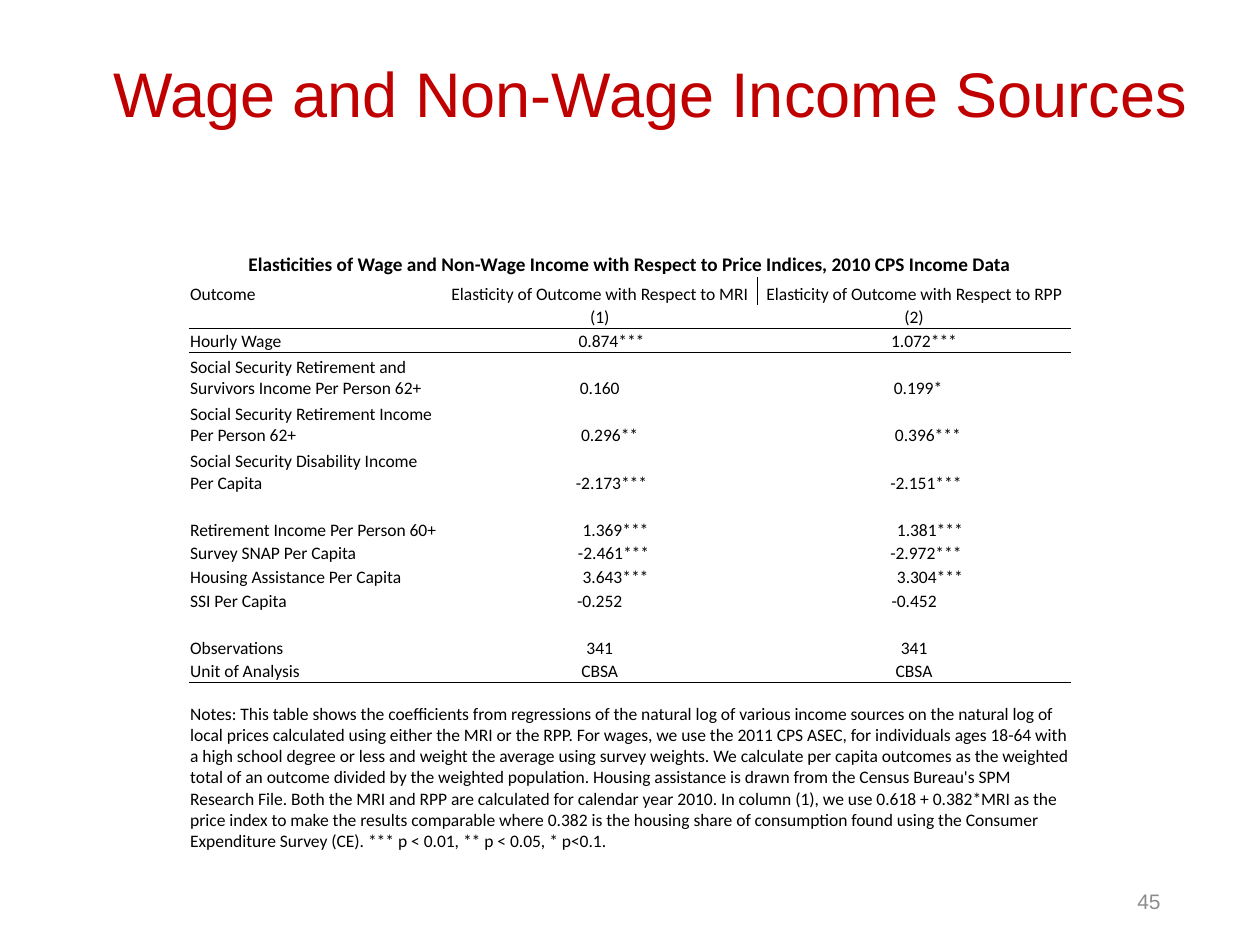
from dataclasses import dataclass

from lxml import etree
from pptx import Presentation
from pptx.dml.color import RGBColor
from pptx.enum import text
from pptx.oxml import ns
from pptx.util import Pt


@dataclass(frozen=True)
class Theme:
    title: str = "C00000"
    ink: str = "000000"
    muted: str = "8C8C8C"
    heading_font: str = "Arial"
    body_font: str = "Calibri"
    title_size: float = 36
    caption_size: float = 11
    body_size: float = 10
    number_size: float = 12
    rule_width: float = 0.5
    plain_table: str = "{2D5ABB26-0587-4C30-8999-92F81FD0307C}"


LEFT, CENTER, RIGHT = (text.PP_ALIGN.LEFT, text.PP_ALIGN.CENTER,
                       text.PP_ALIGN.RIGHT)
BOTTOM, MIDDLE = text.MSO_ANCHOR.BOTTOM, text.MSO_ANCHOR.MIDDLE

CAPTION = ("Elasticities of Wage and Non-Wage Income with Respect to "
           "Price Indices, 2010 CPS Income Data")
NOTES = (
    "Notes: This table shows the coefficients from regressions of the natural "
    "log of various income sources on the natural log of local prices "
    "calculated using either the MRI or the RPP. For wages, we use the 2011 "
    "CPS ASEC, for individuals ages 18-64 with a high school degree or less "
    "and weight the average using survey weights. We calculate per capita "
    "outcomes as the weighted total of an outcome divided by the weighted "
    "population. Housing assistance is drawn from the Census Bureau's SPM "
    "Research File. Both the MRI and RPP are calculated for calendar year "
    "2010. In column (1), we use 0.618 + 0.382*MRI as the price index to make "
    "the results comparable where 0.382 is the housing share of consumption "
    "found using the Consumer Expenditure Survey (CE). *** p < 0.01, "
    "** p < 0.05, * p<0.1."
)

# Each row: outcome, MRI value, RPP value
ROWS = [
    (CAPTION, "", ""),
    ("Outcome", "Elasticity of Outcome with Respect to MRI",
     "Elasticity of Outcome with Respect to RPP"),
    ("", "(1)", "(2)"),
    ("Hourly Wage", "0.874***", "1.072***"),
    ("Social Security Retirement and Survivors Income Per Person 62+",
     "0.160", "0.199*"),
    ("Social Security Retirement Income Per Person 62+",
     "0.296**", "0.396***"),
    ("Social Security Disability Income Per Capita",
     "-2.173***", "-2.151***"),
    ("Retirement Income Per Person 60+", "1.369***", "1.381***"),
    ("Survey SNAP Per Capita", "-2.461***", "-2.972***"),
    ("Housing Assistance Per Capita", "3.643***", "3.304***"),
    ("SSI Per Capita", "-0.252", "-0.452"),
    ("", "", ""),
    ("Observations", "341", "341"),
    ("Unit of Analysis", "CBSA", "CBSA"),
    (NOTES, "", ""),
]
CAPTION_ROW, HEADER_ROW, NUMBER_ROW = 0, 1, 2
UNIT_ROW, NOTES_ROW = len(ROWS) - 2, len(ROWS) - 1
COLUMN_WIDTHS = [144.7, 180, 179.3]
LINE = 13.5
ROW_HEIGHTS = [14.4, 15.8] + [LINE] * 2 + [2 * LINE] * 4 + [LINE] * 6 + [97]

# Left indents, in points, that line up the starred values
INDENTS = {
    "0.874***": 13.5, "1.072***": 11.3, "0.199*": 4.5, "0.296**": 11.3,
    "0.396***": 15.8, "-2.173***": 13.5, "-2.151***": 13.5, "1.369***": 18,
    "1.381***": 18, "-2.461***": 15.8, "-2.972***": 13.5, "3.643***": 18,
    "3.304***": 18,
}


class SlideBuilder:
    def __init__(self, page, theme):
        self.page = page
        self.theme = theme

    def set_text(self, frame, words, size, font, color, align, bold=False):
        frame.text = words
        para = frame.paragraphs[0]
        para.alignment = align
        for span in para.runs:
            span.font.size, span.font.name = Pt(size), font
            span.font.bold = bold
            span.font.color.rgb = RGBColor.from_string(color)
        if not words:  # keeps an empty row from growing
            etree.SubElement(para._p, ns.qn("a:endParaRPr"),
                             sz=str(int(size * 100)))
        return para

    def label(self, place, words, size, color, align, anchor):
        box = self.page.shapes.add_textbox(*map(Pt, place))
        frame = box.text_frame
        frame.word_wrap = True
        frame.vertical_anchor = anchor
        return self.set_text(frame, words, size, self.theme.heading_font,
                             color, align)

    def border(self, cell, side):
        line = etree.SubElement(cell._tc.get_or_add_tcPr(), ns.qn(f"a:ln{side}"),
                                w=str(Pt(self.theme.rule_width)))
        fill = etree.SubElement(line, ns.qn("a:solidFill"))
        etree.SubElement(fill, ns.qn("a:srgbClr"), val=self.theme.ink)

    def cell(self, cell, words, align, sides="", caption=False):
        cell.margin_left = cell.margin_right = cell.margin_top = Pt(0.7)
        cell.margin_bottom = Pt(0)
        cell.vertical_anchor = BOTTOM
        size = self.theme.caption_size if caption else self.theme.body_size
        para = self.set_text(cell.text_frame, words, size,
                             self.theme.body_font, self.theme.ink, align,
                             bold=caption)
        if words in INDENTS:
            para._p.get_or_add_pPr().set("marL", str(Pt(INDENTS[words])))
        for side in sides:
            self.border(cell, side)
        cell.fill.background()

    def table(self, left, top):
        table = self.page.shapes.add_table(
            len(ROWS), len(COLUMN_WIDTHS), Pt(left), Pt(top),
            Pt(sum(COLUMN_WIDTHS)), Pt(sum(ROW_HEIGHTS))).table
        table.first_row = table.horz_banding = False
        style = table._tbl.tblPr.find(ns.qn("a:tableStyleId"))
        style.text = self.theme.plain_table
        for column, width in zip(table.columns, COLUMN_WIDTHS):
            column.width = Pt(width)
        for row, height in zip(table.rows, ROW_HEIGHTS):
            row.height = Pt(height)
        for r, row in enumerate(ROWS):
            for c, words in enumerate(row):
                sides = "B" if r in (NUMBER_ROW, UNIT_ROW) else ""
                if r == HEADER_ROW:
                    sides = ("", "R", "L")[c]
                elif r in (NUMBER_ROW + 1, NOTES_ROW):
                    sides = "T"
                caption = r == CAPTION_ROW
                align = CENTER if c or caption else LEFT
                self.cell(table.cell(r, c), words, align, sides, caption)
        for r in (CAPTION_ROW, NOTES_ROW):
            table.cell(r, 0).merge(table.cell(r, len(COLUMN_WIDTHS) - 1))


def main():
    deck = Presentation()
    deck.slide_width, deck.slide_height = Pt(720), Pt(540)
    theme = Theme()
    slide = SlideBuilder(deck.slides.add_slide(deck.slide_layouts[6]), theme)

    # Page number
    slide.label((508.3, 500.4, 162, 28.8), "45", theme.number_size,
                theme.muted, RIGHT, MIDDLE)
    # Elasticity table with notes
    slide.table(108, 144)
    # Title
    title = slide.label((23, 0, 697, 78.5), "Wage and Non-Wage Income Sources",
                        theme.title_size, theme.title, CENTER, BOTTOM)
    title.line_spacing = 0.9

    deck.save("out.pptx")


if __name__ == "__main__":
    main()
